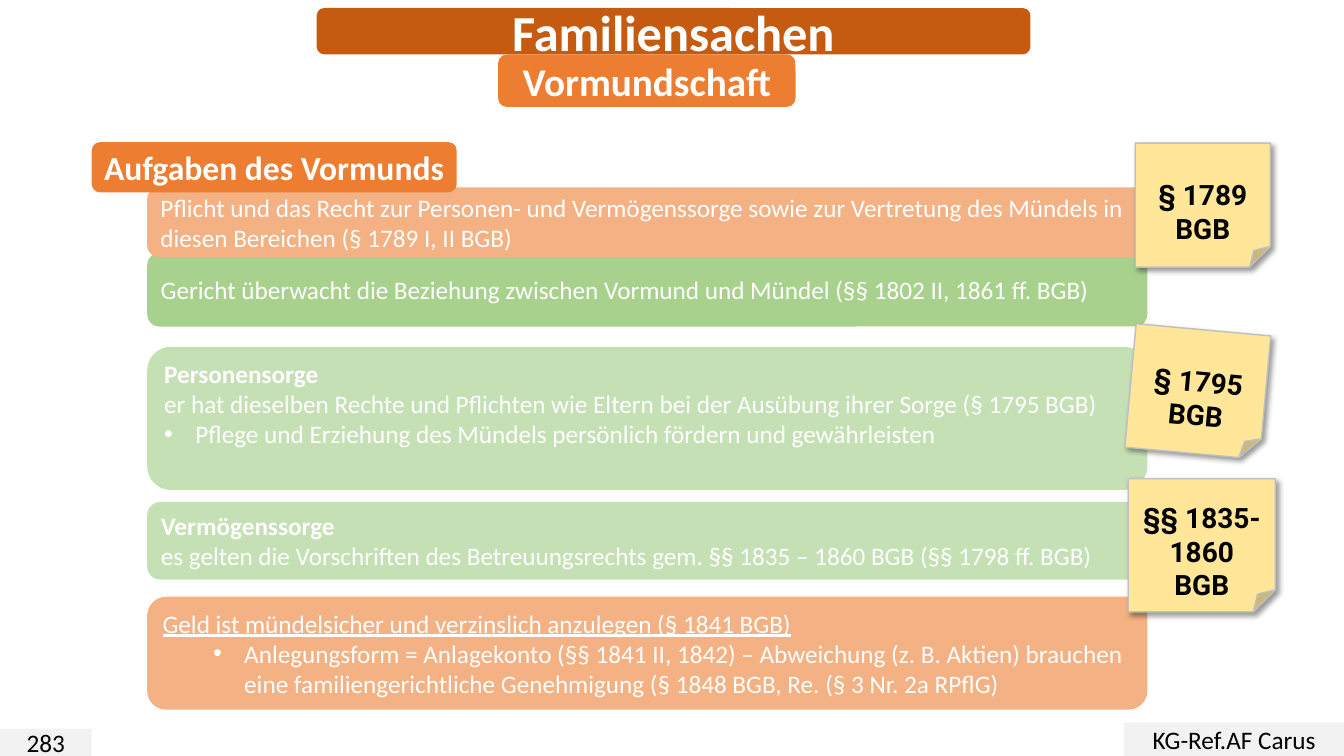
import dataclasses

import pptx
import pptx.dml.color
import pptx.enum.shapes
import pptx.enum.text
import pptx.oxml
import pptx.oxml.ns
import pptx.util

Inches = pptx.util.Inches
SHAPES = pptx.enum.shapes.MSO_SHAPE
ALIGN = pptx.enum.text.PP_ALIGN


@dataclasses.dataclass(frozen=True)
class Theme:
    white: str = "FFFFFF"
    black: str = "000000"
    title: str = "C55A11"
    heading: str = "ED7D31"
    duty: str = "F4B183"
    court: str = "A9D18E"
    care: str = "C5E0B4"
    note: str = "FFE699"
    note_edge: str = "BFBFBF"
    footer: str = "F2F2F2"
    body_font: str = "Calibri"
    note_font: str = "Roboto"
    title_size: int = 36
    subtitle_size: int = 28
    heading_size: int = 24
    note_size: int = 20
    body_size: int = 18


def rgb(value):
    return pptx.dml.color.RGBColor.from_string(value)


def write(para, text, *, size, font, color, bold=False, underline=False,
          align=ALIGN.LEFT, level=0, bullet_at=None):
    para.alignment = align
    para.level = level
    if bullet_at is not None:
        hang = Inches(0.31)
        properties = para._p.get_or_add_pPr()
        properties.set("marL", str(Inches(bullet_at)))
        properties.set("indent", str(-hang))
        for tag, key, value in (("buFont", "typeface", "Arial"), ("buChar", "char", "•")):
            bullet = pptx.oxml.parse_xml(
                f'<a:{tag} {pptx.oxml.ns.nsdecls("a")} {key}="{value}"/>')
            properties.append(bullet)
    span = para.add_run()
    span.text = text
    span.font.size = pptx.util.Pt(size)
    span.font.name = font
    span.font.color.rgb = rgb(color)
    span.font.bold = bold
    span.font.underline = underline


class Page:
    """Draws the elements of one slide in a shared style."""

    def __init__(self, slide, theme):
        self.slide = slide
        self.theme = theme

    def box(self, kind, place, fill, lines, **style):
        box = self.slide.shapes.add_shape(kind, *map(Inches, place))
        box.shadow.inherit = False
        box.fill.solid()
        box.fill.fore_color.rgb = rgb(fill)
        box.line.fill.background()
        frame = box.text_frame
        frame.word_wrap = True
        frame.vertical_anchor = pptx.enum.text.MSO_ANCHOR.MIDDLE
        for index, (text, changes) in enumerate(lines):
            para = frame.add_paragraph() if index else frame.paragraphs[0]
            write(para, text, **{**style, **changes})
        return box

    def banner(self, place, fill, text, size, align=ALIGN.CENTER):
        self.box(SHAPES.ROUNDED_RECTANGLE, place, fill, [(text, {})], size=size,
                 font=self.theme.body_font, color=self.theme.white, bold=True, align=align)

    def panel(self, top, height, fill, *lines, bottom_inset=0.05):
        panel = self.box(SHAPES.ROUNDED_RECTANGLE, (1.46, top, 9.92, height), fill, lines,
                         size=self.theme.body_size, font=self.theme.body_font,
                         color=self.theme.white)
        panel.text_frame.margin_bottom = Inches(bottom_inset)

    def footer(self, place, text):
        self.box(SHAPES.RECTANGLE, place, self.theme.footer, [(text, {})],
                 size=self.theme.body_size, font=self.theme.body_font,
                 color=self.theme.black, align=ALIGN.CENTER)

    def note(self, place, section, rotation=0):
        note = self.box(SHAPES.FOLDED_CORNER, place, self.theme.note,
                        [(section, {}), ("BGB", {})], size=self.theme.note_size,
                        font=self.theme.note_font, color=self.theme.black,
                        bold=True, align=ALIGN.CENTER)
        note.rotation = rotation
        note.line.color.rgb = rgb(self.theme.note_edge)
        note.line.width = pptx.util.Pt(1)
        note.text_frame.margin_top = Inches(0.38)
        effects = note._element.spPr.find(pptx.oxml.ns.qn("a:effectLst"))
        effects.append(pptx.oxml.parse_xml(
            f'<a:outerShdw {pptx.oxml.ns.nsdecls("a")} blurRad="{pptx.util.Pt(4)}" '
            f'dist="{pptx.util.Pt(3)}" dir="2700000" algn="tl" rotWithShape="0">'
            f'<a:srgbClr val="{self.theme.black}"><a:alpha val="40000"/></a:srgbClr>'
            '</a:outerShdw>'))


def main():
    deck = pptx.Presentation()
    deck.slide_width, deck.slide_height = Inches(13.33), Inches(7.5)
    theme = Theme()
    page = Page(deck.slides.add_slide(deck.slide_layouts[6]), theme)

    page.panel(2.51, 0.73, theme.court, (
        "Gericht überwacht die Beziehung zwischen Vormund und Mündel "
        "(§§ 1802 II, 1861 ff. BGB)", {}))
    page.banner((3.14, 0.08, 7.08, 0.46), theme.title, "Familiensachen", theme.title_size)
    page.footer((0, 7.23, 0.91, 0.27), "283")
    page.footer((11.15, 7.17, 2.18, 0.33), "KG-Ref.AF Carus")
    page.panel(1.86, 0.69, theme.duty, (
        "Pflicht und das Recht zur Personen- und Vermögenssorge sowie zur Vertretung "
        "des Mündels in diesen Bereichen (§ 1789 I, II BGB)", {}))
    page.banner((4.94, 0.54, 2.95, 0.52), theme.heading, "Vormundschaft",
                theme.subtitle_size)
    page.banner((0.91, 1.41, 3.62, 0.5), theme.heading, "Aufgaben des Vormunds",
                theme.heading_size, ALIGN.LEFT)
    page.note((11.26, 1.42, 1.34, 1.23), "§ 1789")
    page.panel(
        3.44, 1.42, theme.care,
        ("Personensorge", {"bold": True}),
        ("er hat dieselben Rechte und Pflichten wie Eltern bei der Ausübung ihrer Sorge "
         "(§ 1795 BGB)", {}),
        ("Pflege und Erziehung des Mündels persönlich fördern und gewährleisten",
         {"bullet_at": 0.31}),
        bottom_inset=0.35)
    page.panel(
        4.98, 0.77, theme.care,
        ("Vermögenssorge", {"bold": True}),
        ("es gelten die Vorschriften des Betreuungsrechts gem. §§ 1835 – 1860 BGB "
         "(§§ 1798 ff. BGB)", {}))
    page.panel(
        5.92, 1.12, theme.duty,
        ("Geld ist mündelsicher und verzinslich anzulegen (§ 1841 BGB)",
         {"underline": True}),
        ("Anlegungsform = Anlagekonto (§§ 1841 II, 1842) – Abweichung (z. B. Aktien) "
         "brauchen eine familiengerichtliche Genehmigung (§ 1848 BGB, Re. "
         "(§ 3 Nr. 2a RPflG)", {"level": 1, "bullet_at": 0.81}))
    page.note((11.21, 3.27, 1.34, 1.23), "§ 1795", rotation=5.2)
    page.note((11.19, 4.75, 1.46, 1.32), "§§ 1835-1860")

    deck.save("out.pptx")


if __name__ == "__main__":
    main()
